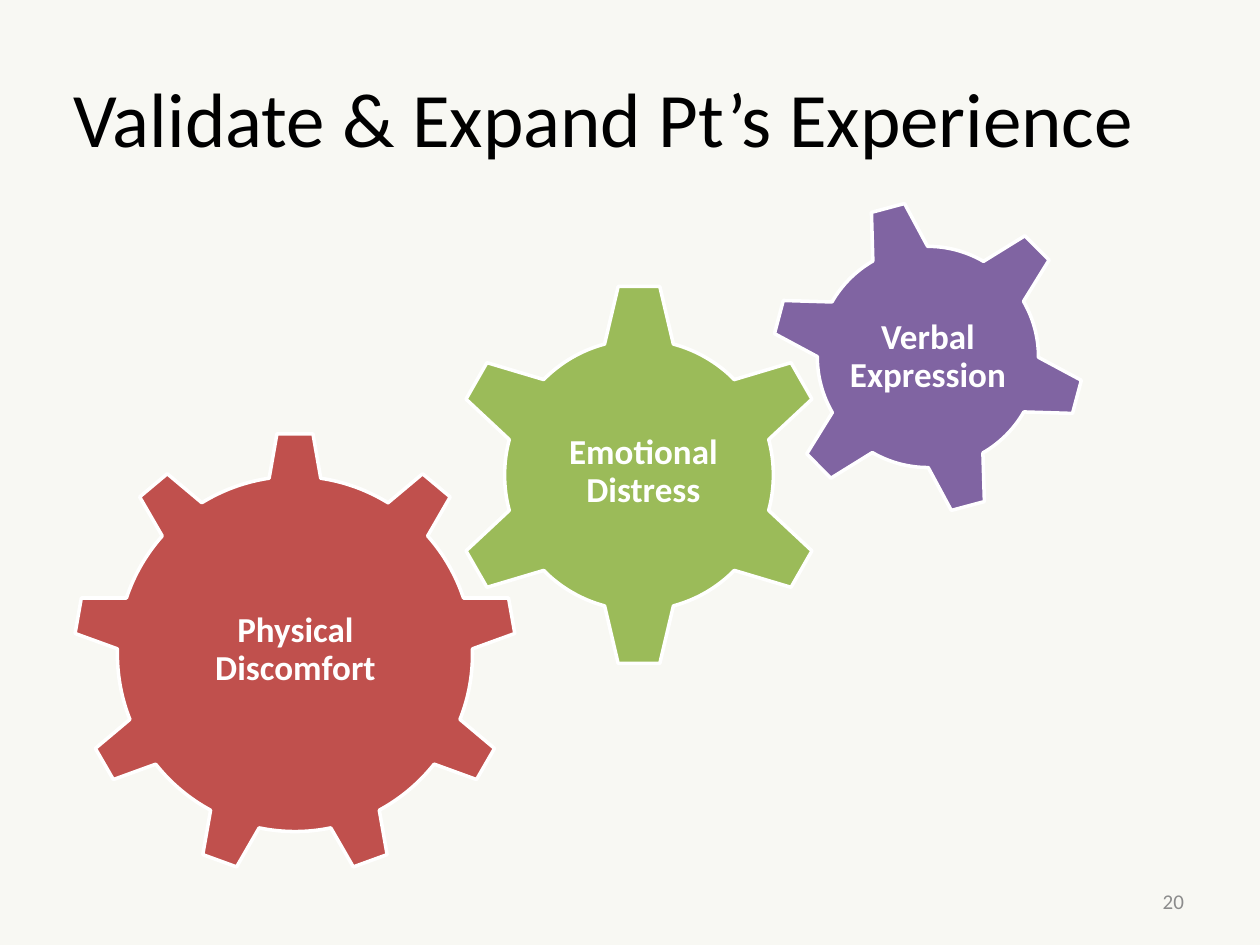
import pptx
import pptx.dml.color
import pptx.enum.shapes
import pptx.enum.text
import pptx.util

RGB = pptx.dml.color.RGBColor
GEAR = pptx.enum.shapes.MSO_SHAPE
ALIGN = pptx.enum.text.PP_ALIGN

CREAM = RGB(0xF8, 0xF8, 0xF3)
BLACK = RGB(0x00, 0x00, 0x00)
GRAY = RGB(0x8C, 0x8C, 0x8C)
WHITE = RGB(0xFF, 0xFF, 0xFF)
RED = RGB(0xC0, 0x50, 0x4D)
GREEN = RGB(0x9B, 0xBB, 0x59)
PURPLE = RGB(0x80, 0x64, 0xA2)

SCALE = 914400 / 126  # EMU per px


def px(*sizes):
    return [round(size * SCALE) for size in sizes]


def write(shape, text, size=20, color=WHITE, bold=False, align=ALIGN.CENTER,
          line=1.0, pads=(13, 6, 13, 6)):
    frame = shape.text_frame
    frame.word_wrap = True
    frame.auto_size = pptx.enum.text.MSO_AUTO_SIZE.NONE
    frame.vertical_anchor = pptx.enum.text.MSO_ANCHOR.MIDDLE
    (frame.margin_left, frame.margin_top,
     frame.margin_right, frame.margin_bottom) = px(*pads)
    para = frame.paragraphs[0]
    para.alignment = align
    para.line_spacing = line
    run = para.add_run()
    run.text = text
    run.font.name = "Calibri"
    run.font.size = pptx.util.Pt(size)
    run.font.bold = bold
    run.font.color.rgb = color


# Slide and background
deck = pptx.Presentation()
deck.slide_width, deck.slide_height = px(1260, 945)
slide = deck.slides.add_slide(deck.slide_layouts[5])
slide.background.fill.solid()
slide.background.fill.fore_color.rgb = CREAM

# Title, set a little left of centre by its right margin
title = slide.shapes.title
title.left, title.top, title.width, title.height = px(63, 38, 1134, 157)
write(title, "Validate & Expand Pt’s Experience", size=44, color=BLACK,
      pads=(0, 6, 52, 6))

# Slide number
number = slide.shapes.add_textbox(*px(903, 876, 294, 50))
write(number, "20", size=12, color=GRAY, align=ALIGN.RIGHT)

# Gears: kind, colour, turn, gear box, label, label box
gears = [
    (GEAR.GEAR_9, RED, 0, (73, 432, 444, 444),
     "Physical Discomfort", (163, 536, 265, 228)),
    (GEAR.GEAR_6, GREEN, 0, (447, 282, 384, 386),
     "Emotional Distress", (517, 378, 253, 189)),
    (GEAR.GEAR_6, PURPLE, 345, (770, 199, 316, 316),
     "Verbal Expression", (839, 268, 178, 178)),
]
for kind, color, turn, box, text, area in gears:
    gear = slide.shapes.add_shape(kind, *px(*box))
    gear.shadow.inherit = False
    gear.rotation = turn
    gear.fill.solid()
    gear.fill.fore_color.rgb = color
    gear.line.color.rgb = WHITE
    gear.line.width = pptx.util.Pt(2)
    label = slide.shapes.add_textbox(*px(*area))
    write(label, text, bold=True, line=0.9, pads=(4, 4, 4, 4))

deck.save("out.pptx")
